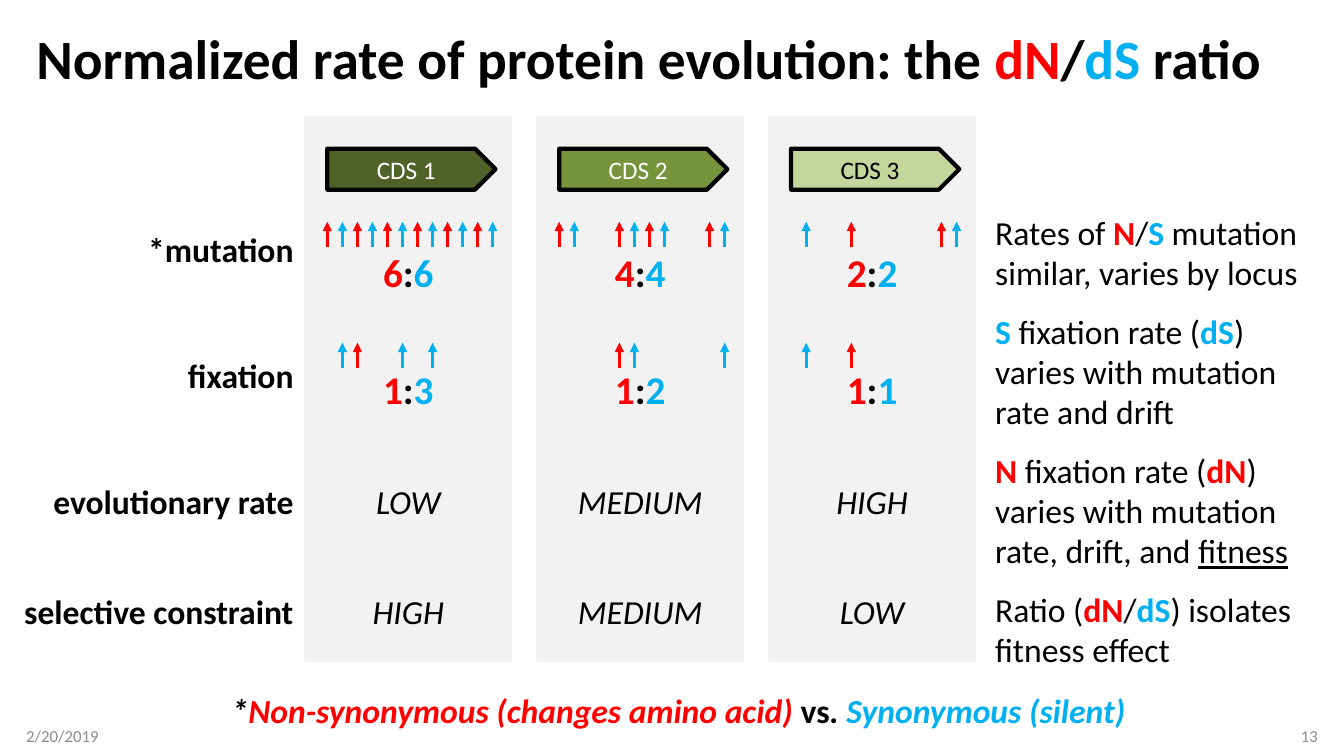
from pptx import Presentation
from pptx.dml.color import RGBColor
from pptx.enum.shapes import MSO_CONNECTOR as CONN, MSO_SHAPE as SHAPE
from pptx.enum.text import MSO_ANCHOR as ANCHOR, MSO_AUTO_SIZE as AUTO, PP_ALIGN as ALIGN
from pptx.oxml.ns import qn
from pptx.util import Inches, Pt
from lxml.etree import SubElement

W, H = 13.33, 7.5
BLACK, RED, BLUE, GRAY, PANEL = "000000", "FF0000", "00B0F0", "8C8C8C", "F2F2F2"
PANEL_LEFT, PANEL_TOP, PANEL_W, PANEL_H, PANEL_PITCH = 3.02, 1.15, 2.06, 5.42, 2.3
LABEL_RIGHT = 3.01
LABELS = [("*mutation", 2.22), ("fixation", 3.47),
          ("evolutionary rate", 4.72), ("selective constraint", 5.81)]
ARROW_ROWS = [(2.2, 2.41), (3.4, 3.58)]
GENES = [
    ("CDS 1", "4F6228", "FFFFFF", [range(12), (1, 2, 5, 7)], ["LOW", "HIGH"]),
    ("CDS 2", "77933C", "FFFFFF", [(0, 1, 4, 5, 6, 7, 10, 11), (4, 5, 11)], ["MEDIUM", "MEDIUM"]),
    ("CDS 3", "C3D69B", BLACK, [(1, 4, 10, 11), (1, 4)], ["HIGH", "LOW"]),
]
N, S, DN, DS = [(t, RED if "N" in t else BLUE, "b") for t in ("N", "S", "dN", "dS")]
NOTES = [
    [("Rates of ",), N, ("/",), S, (" mutation similar, varies by locus",)],
    [S, (" fixation rate (",), DS, (") varies with mutation rate and drift",)],
    [N, (" fixation rate (",), DN, (") varies with mutation rate, drift, and ",),
     ("fitness", BLACK, "u")],
    [("Ratio (",), DN, ("/",), DS, (") isolates fitness effect",)],
]


def rgb(color):
    """Turn a hex string into a colour."""
    return RGBColor.from_string(color)


def write(p, parts, size, align=ALIGN.LEFT):
    """Fill a paragraph with (text, colour, style letters) parts."""
    p.alignment = align
    for text, color, style in [(*part, BLACK, "")[:3] if len(part) == 1 else part for part in parts]:
        r = p.add_run()
        r.text = text
        r.font.name, r.font.size = "Calibri", Pt(size)
        r.font.color.rgb = rgb(color)
        r.font.bold, r.font.italic, r.font.underline = "b" in style, "i" in style, "u" in style


def place(sp, x, y, w, h):
    """Move a shape to a box in inches."""
    sp.left, sp.top, sp.width, sp.height = map(Inches, (x, y, w, h))


def add_text(s, box, parts, size=24, align=ALIGN.LEFT):
    """Add a one-paragraph text box."""
    tf = s.shapes.add_textbox(*map(Inches, box)).text_frame
    tf.word_wrap = True
    write(tf.paragraphs[0], parts, size, align)
    return tf


def add_block(s, kind, box, fill):
    """Add a plain filled shape."""
    sp = s.shapes.add_shape(kind, *map(Inches, box))
    sp.shadow.inherit = False
    sp.fill.solid()
    sp.fill.fore_color.rgb = rgb(fill)
    sp.line.fill.background()
    return sp


def add_arrow(s, x, y, h, color):
    """Add an upward arrow whose tip is at x, y."""
    c = s.shapes.add_connector(CONN.STRAIGHT, *map(Inches, (x, y + h, x, y)))
    c.line.color.rgb = rgb(color)
    c.line.width = Pt(2.25)
    SubElement(c.line._get_or_add_ln(), qn("a:tailEnd"), type="triangle")
    SubElement(c._element.spPr, qn("a:effectLst"))


def add_title(s, x, y, w, h):
    """Fill the title placeholder."""
    title = s.shapes.title
    place(title, x, y, w, h)
    tf = title.text_frame
    tf.auto_size, tf.vertical_anchor = AUTO.NONE, ANCHOR.MIDDLE
    p = tf.paragraphs[0]
    p.line_spacing = 0.9
    write(p, [("Normalized rate of protein evolution: the ", BLACK, "b"), DN,
              ("/", BLACK, "b"), DS, (" ratio", BLACK, "b")], 39.6)


def add_notes(s, x, y, w, h):
    """Fill the body placeholder with the remarks on the right."""
    body = s.placeholders[1]
    place(body, x, y, w, h)
    tf = body.text_frame
    tf.auto_size, tf.vertical_anchor = AUTO.NONE, ANCHOR.TOP
    for i, parts in enumerate(NOTES):
        p = tf.add_paragraph() if i else tf.paragraphs[0]
        pPr = p._p.get_or_add_pPr()
        pPr.set("marL", "0")
        pPr.set("indent", "0")
        SubElement(pPr, qn("a:buNone"))
        p.space_before = Pt(13 if i else 0)
        write(p, parts, 24)


def add_gene(s, x, y, w, h, name, fill, ink, rows, levels):
    """Add one gene's panel: tag, arrow rows with ratios, and levels."""
    add_block(s, SHAPE.RECTANGLE, (x, y, w, h), PANEL)
    tag = add_block(s, SHAPE.PENTAGON, (x + 0.11 * w, y + 0.06 * h, 0.81 * w, 0.075 * h), fill)
    tag.line.color.rgb = rgb(BLACK)
    tag.line.width = Pt(3)
    tag.text_frame.vertical_anchor = ANCHOR.MIDDLE
    write(tag.text_frame.paragraphs[0], [(name, ink, "")], 18, ALIGN.CENTER)
    for slots, (arrow_y, ratio_y) in zip(rows, ARROW_ROWS):
        for slot in slots:
            add_arrow(s, x + (0.11 + 0.0724 * slot) * w, arrow_y, 0.25, BLUE if slot % 2 else RED)
        blues = sum(slot % 2 for slot in slots)
        add_text(s, (x, ratio_y, w, 0.57),
                 [(str(len(slots) - blues), RED, "b"), (":", BLACK, "b"), (str(blues), BLUE, "b")],
                 28, ALIGN.CENTER)
    for level, (_, level_y) in zip(levels, LABELS[2:]):
        add_text(s, (x, level_y, w, 0.5), [(level, BLACK, "i")], align=ALIGN.CENTER)


def add_footer(s, x, y, w, h):
    """Add the date at the left and the slide number at the right."""
    for text, align in (("2/20/2019", ALIGN.LEFT), ("13", ALIGN.RIGHT)):
        tf = add_text(s, (x if align == ALIGN.LEFT else x + w - 3, y, 3, h),
                      [(text, GRAY, "")], 12, align)
        tf.margin_left = tf.margin_right = 0
        tf.vertical_anchor = ANCHOR.MIDDLE


def main():
    """Build the slide and save it."""
    prs = Presentation()
    prs.slide_width, prs.slide_height = Inches(W), Inches(H)
    s = prs.slides.add_slide(prs.slide_layouts[1])
    add_title(s, 0.26, 0.25, 12.81, 0.72)
    add_notes(s, 9.77, 2.05, 3.4, 4.7)
    for i, gene in enumerate(GENES):
        add_gene(s, PANEL_LEFT + i * PANEL_PITCH, PANEL_TOP, PANEL_W, PANEL_H, *gene)
    for label, y in LABELS:
        add_text(s, (0, y, LABEL_RIGHT, 0.5), [(label, BLACK, "b")], align=ALIGN.RIGHT)
    add_text(s, (2.07, 6.8, 9.19, 0.5),
             [("*", BLACK, "bi"), ("Non-synonymous (changes amino acid) ", RED, "bi"),
              ("vs", BLACK, "b"), (". ", BLACK, "bi"), ("Synonymous (silent)", BLUE, "bi")],
             align=ALIGN.RIGHT)
    add_footer(s, 0.26, 7.1, 12.81, 0.4)
    prs.save("out.pptx")


if __name__ == "__main__":
    main()
